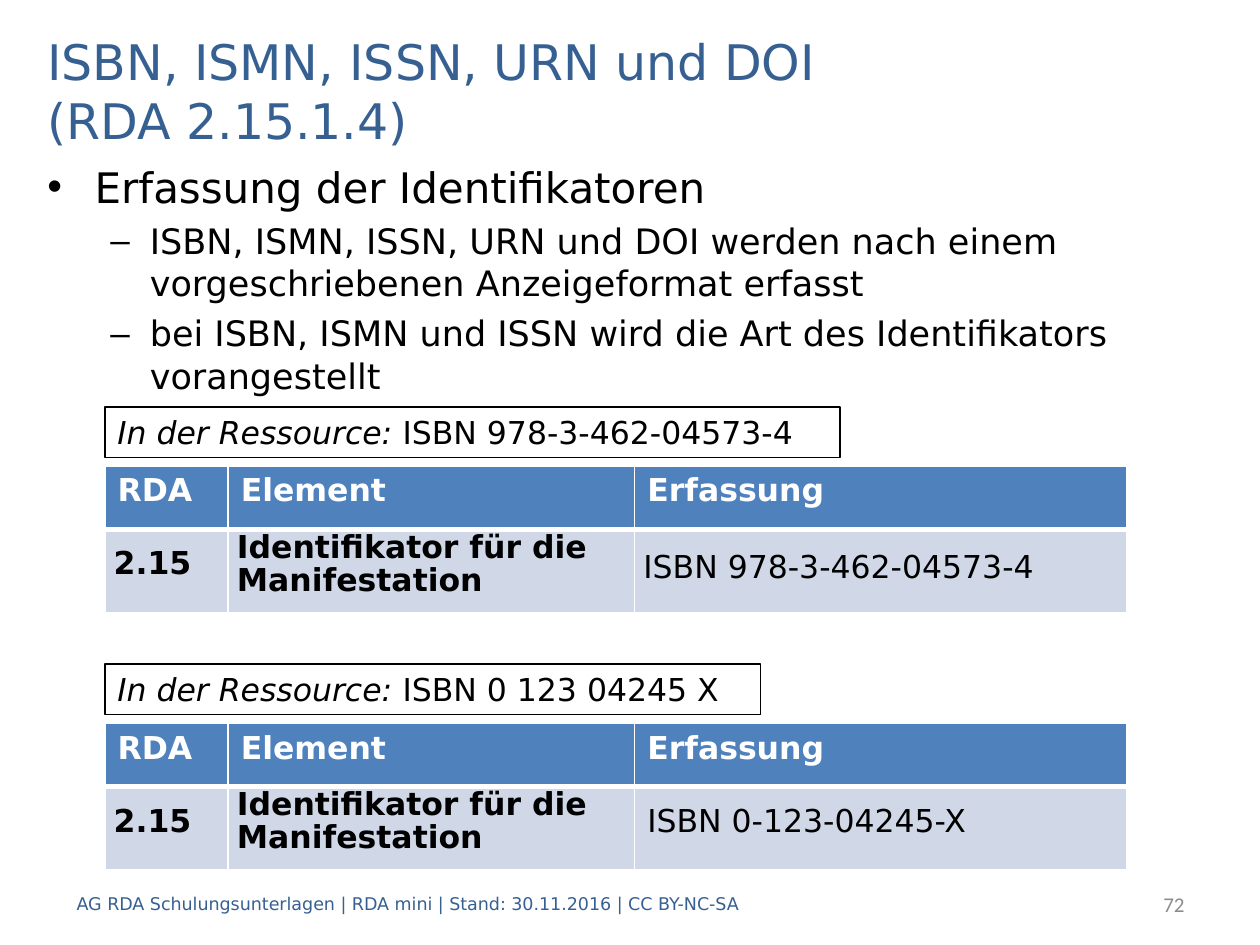
from dataclasses import dataclass

from lxml import etree
from pptx import Presentation
from pptx.dml.color import RGBColor
from pptx.enum.shapes import MSO_SHAPE
from pptx.enum.text import MSO_ANCHOR, PP_ALIGN
from pptx.oxml.ns import qn
from pptx.util import Pt

RECTANGLE = MSO_SHAPE.RECTANGLE
TOP, MIDDLE = MSO_ANCHOR.TOP, MSO_ANCHOR.MIDDLE
LEFT, RIGHT = PP_ALIGN.LEFT, PP_ALIGN.RIGHT

COLORS = {
    "title": "376092", "text": "000000", "number": "8C8C8C",
    "white": "FFFFFF", "header": "4F81BD", "row": "D0D8E8",
}
FONT = "DejaVu Sans"
TABLE_LEFT = 60
COLUMNS = (70.4, 232.3, 281.4)
ROWS = (36, 47.5)
HEADINGS = ("RDA", "Element", "Erfassung")
FIRST_EXAMPLE_TOP, EXAMPLE_STEP = 232.5, 147
TABLE_OFFSET = 34


@dataclass
class Span:
    text: str
    size: float = 18
    color: str = "text"
    font: str = FONT
    bold: bool = False
    italic: bool = False


@dataclass
class Bullet:
    mark: str
    margin: float
    hanging: float
    space: float


@dataclass
class Example:
    source: str
    box_width: float
    line_width: float
    recorded: str
    anchor: MSO_ANCHOR
    left_inset: float
    top_inset: float


HEAD_BULLET = Bullet("•", 27, 27, 5.6)
SUB_BULLET = Bullet("–", 58.5, 22.5, 4.7)
BODY = (
    (HEAD_BULLET, 24, "Erfassung der Identifikatoren"),
    (SUB_BULLET, 20, "ISBN, ISMN, ISSN, URN und DOI werden nach einem "
                     "vorgeschriebenen Anzeigeformat erfasst"),
    (SUB_BULLET, 20, "bei ISBN, ISMN und ISSN wird die Art des Identifikators "
                     "vorangestellt"),
)
EXAMPLES = (
    Example("ISBN 978-3-462-04573-4", 420, 1, "ISBN 978-3-462-04573-4", TOP, 5, 19),
    Example("ISBN 0 123 04245 X", 374.5, 0.75, "ISBN 0-123-04245-X", MIDDLE, 7.2, 0),
)


def rgb(name: str) -> RGBColor:
    return RGBColor.from_string(COLORS[name])


def apply(target, values: dict) -> None:
    for name, value in values.items():
        setattr(target, name, value)


def write(para, *spans: Span, **layout) -> None:
    apply(para, layout)
    for span in spans:
        run = para.add_run()
        run.text = span.text
        apply(run.font, {"name": span.font, "size": Pt(span.size),
                         "bold": span.bold, "italic": span.italic})
        run.font.color.rgb = rgb(span.color)


def paragraphs(frame, count: int) -> list:
    return [frame.paragraphs[0]] + [frame.add_paragraph() for _ in range(count - 1)]


def add_text(page, left, top, width, height, lines, anchor=MIDDLE, align=LEFT):
    box = page.shapes.add_textbox(Pt(left), Pt(top), Pt(width), Pt(height))
    frame = box.text_frame
    apply(frame, {"word_wrap": True, "vertical_anchor": anchor})
    for para, line in zip(paragraphs(frame, len(lines)), lines):
        write(para, line, alignment=align)
    return frame


def set_bullet(para, bullet: Bullet) -> None:
    para.space_before = Pt(bullet.space)
    properties = para._p.get_or_add_pPr()
    properties.set("marL", str(Pt(bullet.margin)))
    properties.set("indent", str(-Pt(bullet.hanging)))
    etree.SubElement(properties, qn("a:buFont"), typeface="Arial")
    etree.SubElement(properties, qn("a:buChar"), char=bullet.mark)


def style_cell(cell, fill: str, top: float, bottom: float) -> None:
    properties = cell._tc.get_or_add_tcPr()
    for side, width in {"L": 1, "R": 1, "T": top, "B": bottom}.items():
        line = etree.SubElement(properties, qn(f"a:ln{side}"), w=str(Pt(width)))
        solid = etree.SubElement(line, qn("a:solidFill"))
        etree.SubElement(solid, qn("a:srgbClr"), val=COLORS["white"])
    cell.fill.solid()
    cell.fill.fore_color.rgb = rgb(fill)


def add_source_box(page, example: Example, top: float) -> None:
    box = page.shapes.add_shape(RECTANGLE, Pt(TABLE_LEFT), Pt(top),
                                Pt(example.box_width), Pt(29))
    box.shadow.inherit = False
    box.fill.solid()
    box.fill.fore_color.rgb = rgb("white")
    box.line.color.rgb = rgb("text")
    box.line.width = Pt(example.line_width)
    apply(box.text_frame, {"word_wrap": True, "vertical_anchor": TOP})
    write(box.text_frame.paragraphs[0], Span("In der Ressource: ", italic=True),
          Span(example.source), alignment=LEFT)


def add_example_table(page, example: Example, top: float) -> None:
    table = page.shapes.add_table(len(ROWS), len(COLUMNS), Pt(TABLE_LEFT), Pt(top),
                                  Pt(sum(COLUMNS)), Pt(sum(ROWS))).table
    for column, width in zip(table.columns, COLUMNS):
        column.width = Pt(width)
    for row, height in zip(table.rows, ROWS):
        row.height = Pt(height)

    # Header row
    for cell, heading in zip(table.rows[0].cells, HEADINGS):
        style_cell(cell, "header", 1, 3)
        write(cell.text_frame.paragraphs[0], Span(heading, color="white", bold=True))

    # Record row
    records = (
        (("2.15",), True, MIDDLE, 5, 0),
        (("Identifikator für die", "Manifestation"), True, MIDDLE, 5, 0),
        ((example.recorded,), False, example.anchor,
         example.left_inset, example.top_inset),
    )
    for cell, record in zip(table.rows[1].cells, records):
        lines, bold, anchor, left_inset, top_inset = record
        style_cell(cell, "row", 3, 1)
        apply(cell, {"vertical_anchor": anchor, "margin_left": Pt(left_inset),
                     "margin_right": Pt(5), "margin_top": Pt(top_inset),
                     "margin_bottom": Pt(0)})
        for para, line in zip(paragraphs(cell.text_frame, len(lines)), lines):
            write(para, Span(line, bold=bold), line_spacing=Pt(13), space_after=Pt(6))


def main() -> None:
    deck = Presentation()
    apply(deck, {"slide_width": Pt(720), "slide_height": Pt(540)})
    page = deck.slides.add_slide(deck.slide_layouts[6])

    # Title and bullet list
    add_text(page, 20, 31.5, 680.5, 40.5, [
        Span(line, 28, "title")
        for line in ("ISBN, ISMN, ISSN, URN und DOI", "(RDA 2.15.1.4)")])
    body = add_text(page, 20, 88.5, 680.5, 430.5,
                    [Span(text, size) for _, size, text in BODY], TOP)
    for para, (bullet, _, _) in zip(body.paragraphs, BODY):
        set_bullet(para, bullet)

    # Examples: source box above its table
    for index, example in enumerate(EXAMPLES):
        top = FIRST_EXAMPLE_TOP + index * EXAMPLE_STEP
        add_example_table(page, example, top + TABLE_OFFSET)
        add_source_box(page, example, top)

    # Page number and footer
    add_text(page, 569.5, 502, 114.5, 29,
             [Span("72", 12, "number", "Calibri")], align=RIGHT)
    add_text(page, 36.7, 502, 629.3, 29, [
        Span("AG RDA Schulungsunterlagen | RDA mini | Stand: 30.11.2016 | CC BY-NC-SA",
             10, "title")])
    deck.save("out.pptx")


if __name__ == "__main__":
    main()
